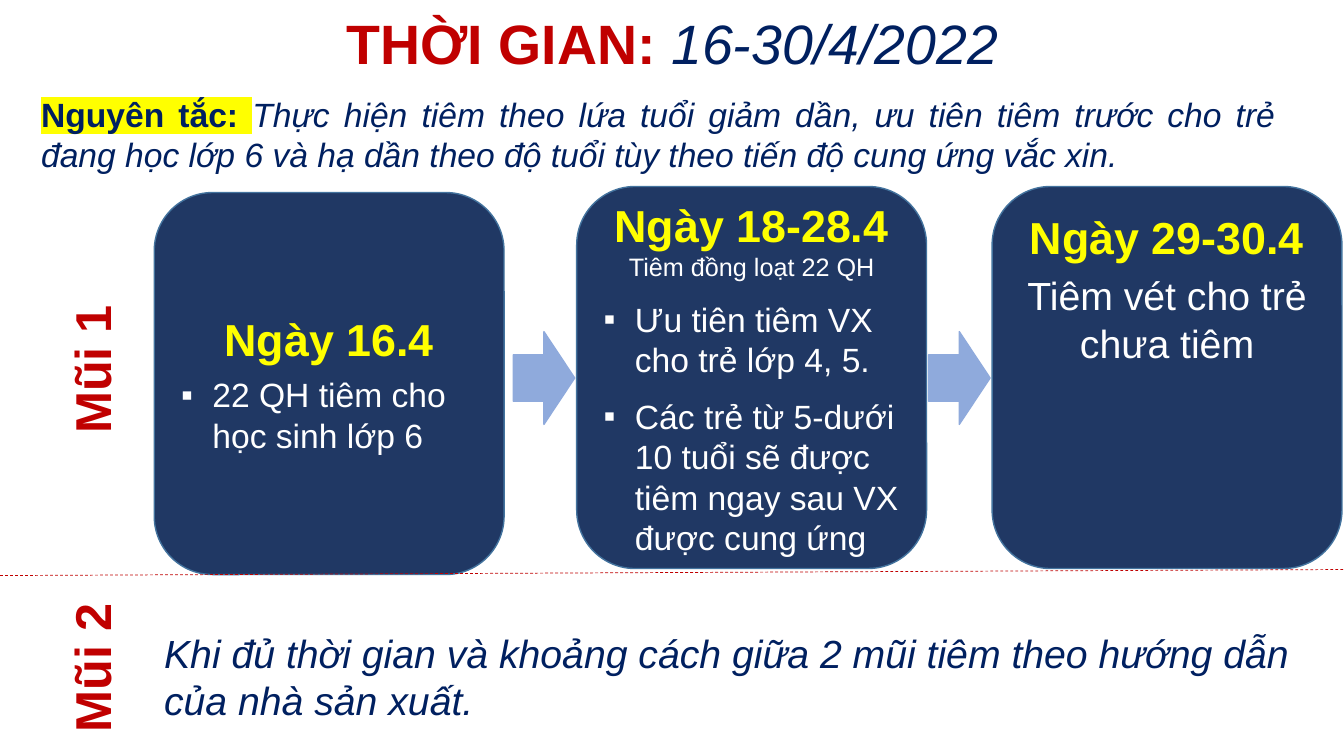
from lxml.etree import SubElement
from pptx import Presentation
from pptx.dml.color import RGBColor
from pptx.enum.dml import MSO_LINE
from pptx.enum.shapes import MSO_CONNECTOR, MSO_SHAPE
from pptx.enum.text import MSO_ANCHOR, PP_ALIGN
from pptx.oxml import parse_xml
from pptx.oxml.ns import qn
from pptx.util import Emu, Pt

PX = 9144  # 100 px to the inch
W, H = 1333, 750
NAVY, RED, YELLOW, WHITE = "002060", "C00000", "FFFF00", "FFFFFF"
CARD, CARD_LINE, ARROW = "203864", "43739E", "8FAADC"
A_NS = "http://schemas.openxmlformats.org/drawingml/2006/main"

# Run formats: size, colour, bold, italic, highlight
DATE = dict(size=32, color=YELLOW, bold=True)
ITEM = dict(size=24, color=WHITE)
NOTE = dict(size=18, color=WHITE)
LARGE = dict(size=28, color=WHITE)
DOSE = dict(size=36, color=RED, bold=True)

# Paragraph formats
CENTER = dict(alignment=PP_ALIGN.CENTER)
LEFT = dict(alignment=PP_ALIGN.LEFT)
SPACED = dict(space_before=Pt(6), space_after=Pt(6))
BULLET = dict(LEFT, **SPACED, bullet="▪")

TITLE = [(dict(CENTER, line_spacing=0.9), [
    ("THỜI GIAN: ", dict(size=39.6, color=RED, bold=True)),
    ("16-30/4/2022", dict(size=39.6, color=NAVY, italic=True))])]
PRINCIPLE = [(dict(SPACED, alignment=PP_ALIGN.JUSTIFY, margin=6), [
    ("Nguyên tắc: ", dict(size=24, color=NAVY, bold=True, highlight=YELLOW)),
    ("Thực hiện tiêm theo lứa tuổi giảm dần, ưu tiên tiêm trước cho trẻ đang "
     "học lớp 6 và hạ dần theo độ tuổi tùy theo tiến độ cung ứng vắc xin.",
     dict(size=24, color=NAVY, italic=True))])]
SECOND_DOSE = [(LEFT, [
    ("Khi đủ thời gian và khoảng cách giữa 2 mũi tiêm theo hướng dẫn của nhà sản xuất.",
     dict(size=28, color=NAVY, italic=True))])]

# Cards: left, top, text frame format, paragraphs
MIDDLE = dict(vertical_anchor=MSO_ANCHOR.MIDDLE)
CARDS = [
    (153, 191, MIDDLE, [
        (CENTER, [("Ngày 16.4", DATE)]),
        (BULLET, [("22 QH tiêm cho học sinh lớp 6", ITEM)])]),
    (572, 185, MIDDLE, [
        (dict(CENTER, **SPACED), [("Ngày 18-28.4 ", DATE), ("Tiêm đồng loạt 22 QH", NOTE)]),
        (BULLET, [("Ưu tiên tiêm VX cho trẻ lớp 4, 5.", ITEM)]),
        (BULLET, [("Các trẻ từ 5-dưới 10 tuổi sẽ được tiêm ngay sau VX được cung ứng", ITEM)])]),
    (984, 185, dict(vertical_anchor=MSO_ANCHOR.TOP, margin_top=Emu(6 * PX)), [
        (CENTER, [("Ngày 29-30.4", DATE)]),
        (dict(CENTER, **SPACED), [("Tiêm vét cho trẻ chưa tiêm", LARGE)])]),
]
CARD_W, CARD_H = 347, 379
ARROW_LEFTS, ARROW_TOP, ARROW_W, ARROW_H = (509, 921), 329, 61, 92
DOSES = [("Mũi 1", 331), ("Mũi 2", 627)]


def px(*lengths):
    return [Emu(n * PX) for n in lengths]


def rgb(color):
    return RGBColor.from_string(color)


def format_run(r, size, color, bold=False, italic=False, highlight=None):
    values = dict(name="Arial", size=Pt(size), bold=bold, italic=italic)
    for name, value in values.items():
        setattr(r.font, name, value)
    r.font.color.rgb = rgb(color)
    if highlight:
        fill = r.font._element.find(qn("a:solidFill"))
        fill.addnext(parse_xml(
            f'<a:highlight xmlns:a="{A_NS}"><a:srgbClr val="{highlight}"/></a:highlight>'))


def format_paragraph(p, bullet=None, margin=0, **values):
    for name, value in values.items():
        setattr(p, name, value)
    pPr = p._p.get_or_add_pPr()
    if bullet:
        pPr.set("marL", str(31 * PX))
        pPr.set("indent", str(-31 * PX))
        SubElement(pPr, qn("a:buFont"), typeface="Arial")
        SubElement(pPr, qn("a:buChar"), char=bullet)
    elif margin:
        pPr.set("marL", str(margin * PX))


def write(sp, paragraphs, **frame):
    tf = sp.text_frame
    for name, value in {"word_wrap": True, **frame}.items():
        setattr(tf, name, value)
    for i, (p_format, runs) in enumerate(paragraphs):
        p = tf.add_paragraph() if i else tf.paragraphs[0]
        format_paragraph(p, **p_format)
        for text, r_format in runs:
            r = p.add_run()
            r.text = text
            format_run(r, **r_format)


def add_text(s, box, paragraphs, **frame):
    sp = s.shapes.add_textbox(*px(*box))
    write(sp, paragraphs, **frame)
    return sp


def add_preset(s, kind, box, fill, line):
    sp = s.shapes.add_shape(kind, *px(*box))
    sp.shadow.inherit = False
    sp.fill.solid()
    sp.fill.fore_color.rgb = rgb(fill)
    sp.line.color.rgb = rgb(line)
    sp.line.width = Pt(1)
    return sp


def add_divider(s):
    line = s.shapes.add_connector(MSO_CONNECTOR.STRAIGHT, *px(0, 571, W, 565))
    line.line.color.rgb = rgb(RED)
    line.line.width = Pt(0.5)
    line.line.dash_style = MSO_LINE.DASH
    SubElement(line._element.spPr, qn("a:effectLst"))


def main():
    prs = Presentation()
    prs.slide_width, prs.slide_height = px(W, H)
    s = prs.slides.add_slide(prs.slide_layouts[6])

    add_text(s, (92, 18, 1150, 57), TITLE, **MIDDLE)
    for left, top, frame, paragraphs in CARDS:
        card = add_preset(s, MSO_SHAPE.ROUNDED_RECTANGLE,
                          (left, top, CARD_W, CARD_H), CARD, CARD_LINE)
        write(card, paragraphs, **frame)
    add_text(s, (25, 88, 1250, 91), PRINCIPLE)
    for left in ARROW_LEFTS:
        add_preset(s, MSO_SHAPE.RIGHT_ARROW,
                   (left, ARROW_TOP, ARROW_W, ARROW_H), ARROW, ARROW)
    add_divider(s)
    for label, top in DOSES:
        sp = add_text(s, (17, top, 149, 71), [(CENTER, [(label, DOSE)])], word_wrap=False)
        sp.rotation = 270
    add_text(s, (153, 619, 1177, 104), SECOND_DOSE)

    prs.save("out.pptx")


if __name__ == "__main__":
    main()
